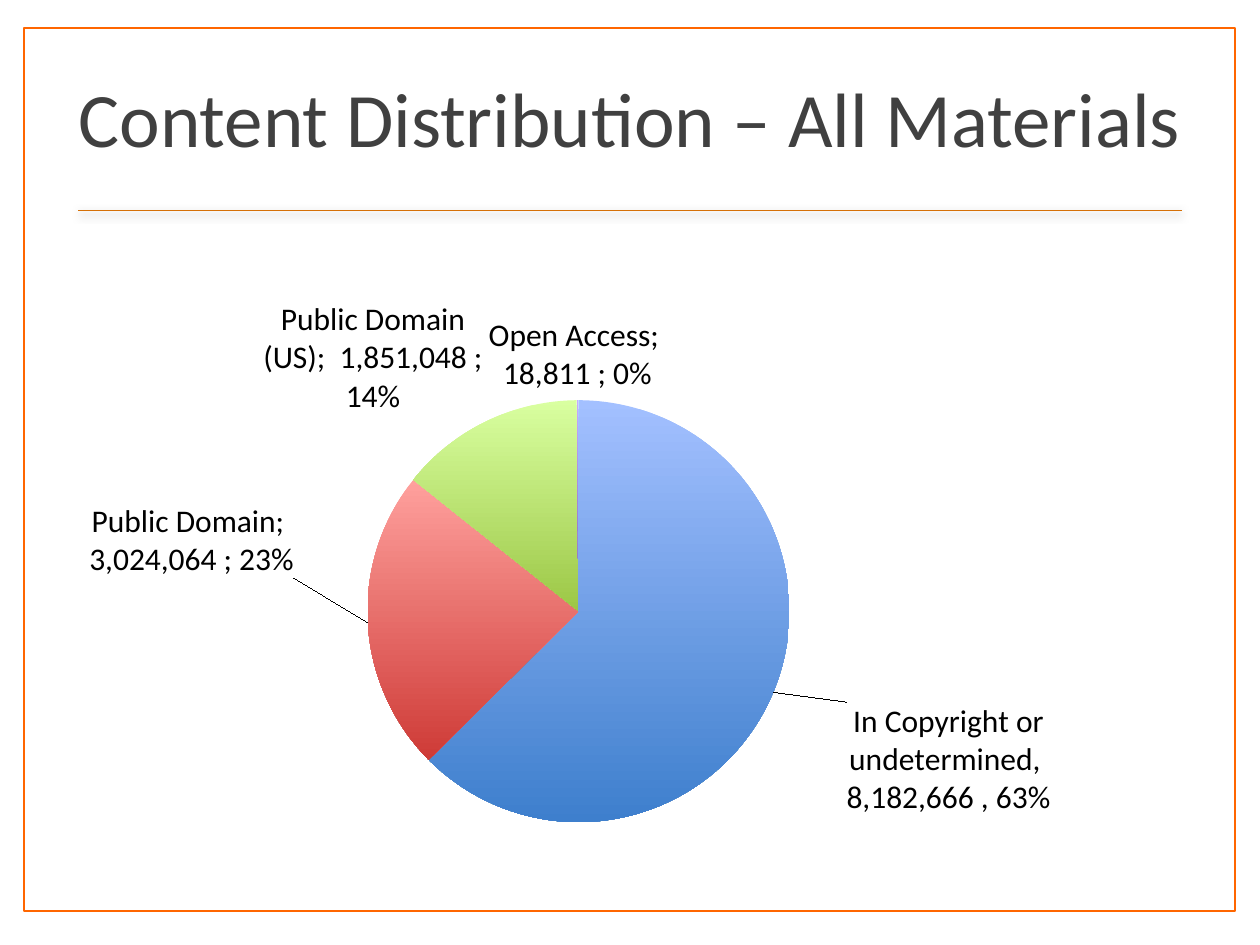
from lxml import etree
from pptx import Presentation
from pptx.chart.data import CategoryChartData
from pptx.dml.color import RGBColor
from pptx.enum.chart import XL_CHART_TYPE, XL_LABEL_POSITION
from pptx.enum.shapes import MSO_CONNECTOR, MSO_SHAPE
from pptx.enum.text import MSO_ANCHOR, PP_ALIGN
from pptx.oxml import parse_xml
from pptx.oxml.ns import nsdecls, qn
from pptx.util import Inches, Pt

PIE = XL_CHART_TYPE.PIE
OUTSIDE = XL_LABEL_POSITION.OUTSIDE_END
STRAIGHT = MSO_CONNECTOR.STRAIGHT
RECTANGLE = MSO_SHAPE.RECTANGLE
MIDDLE = MSO_ANCHOR.MIDDLE
CENTER = PP_ALIGN.CENTER

NUMBER_FORMAT = '_(* #,##0_);_(* \\(#,##0\\);_(* "-"??_);_('
MATERIALS = [
    ("In Copyright", 8182666, "A3C0FF", "3E7FCD"),
    ("Public Domain", 3024064, "FFA09D", "CE3B37"),
    ("Public Domain (US)", 1851048, "D9FFA0", "9CC746"),
    ("Open Access", 18811, "C7A9FF", "7D5BB0"),
]
COPYRIGHT_LABEL = "In Copyright or undetermined,  8,182,666 , 63%"
LABEL_OFFSETS = {0: (0.06, 0.01), 1: (-0.06, -0.12)}


def color(value):
    return RGBColor.from_string(value)


def manual_layout(x, y, size=None):
    layout = parse_xml(f"<c:layout {nsdecls('c')}><c:manualLayout/></c:layout>")
    settings = [("x", x), ("y", y)]
    if size:
        settings = [
            ("layoutTarget", "inner"), ("xMode", "edge"), ("yMode", "edge"),
            *settings, ("w", size[0]), ("h", size[1]),
        ]
    for name, value in settings:
        etree.SubElement(layout[0], qn(f"c:{name}")).set("val", str(value))
    return layout


class SlideBuilder:
    font_name = "Calibri"
    title_color = "404040"
    label_color = "000000"

    def __init__(self, slide):
        self.slide = slide

    def style(self, font, size, value):
        font.name = self.font_name
        font.size = Pt(size)
        font.color.rgb = color(value)

    def frame(self, left, top, width, height, line):
        shape = self.slide.shapes.add_shape(
            RECTANGLE, Inches(left), Inches(top), Inches(width), Inches(height))
        shape.shadow.inherit = False
        shape.fill.solid()
        shape.fill.fore_color.rgb = color("FFFFFF")
        shape.line.color.rgb = color(line)
        shape.line.width = Pt(1)

    def rule(self, left, right, y, line):
        connector = self.slide.shapes.add_connector(
            STRAIGHT, Inches(left), Inches(y), Inches(right), Inches(y))
        connector.line.color.rgb = color(line)
        connector.line.width = Pt(1)
        connector._element.spPr.append(parse_xml(
            f"<a:effectLst {nsdecls('a')}>"
            '<a:outerShdw blurRad="63500" dist="22860" dir="5400000">'
            '<a:srgbClr val="000000"><a:alpha val="35000"/></a:srgbClr>'
            "</a:outerShdw></a:effectLst>"))

    def title(self, text, left, top, width, height):
        shape = self.slide.shapes.add_textbox(
            Inches(left), Inches(top), Inches(width), Inches(height))
        text_frame = shape.text_frame
        text_frame.word_wrap = True
        text_frame.vertical_anchor = MIDDLE
        paragraph = text_frame.paragraphs[0]
        paragraph.text = text
        paragraph.alignment = CENTER
        self.style(paragraph.font, 44, self.title_color)

    def pie(self, materials, left, top, width, height):
        data = CategoryChartData(number_format=NUMBER_FORMAT)
        data.categories = [material[0] for material in materials]
        data.add_series("Series 1", [material[1] for material in materials])
        chart = self.slide.shapes.add_chart(
            PIE, Inches(left), Inches(top), Inches(width), Inches(height), data).chart
        chart.has_legend = False
        chart.has_title = False
        self.style(chart.font, 18, self.label_color)
        plot = chart.plots[0]
        plot.vary_by_categories = True
        plot_area = chart._chartSpace.chart.plotArea
        for layout in plot_area.findall(qn("c:layout")):
            plot_area.remove(layout)
        plot_area.insert(0, manual_layout(0.27, 0.3, (0.39, 0.61)))
        series = plot.series[0]
        for index, (_, _, light, dark) in enumerate(materials):
            fill = series.points[index].format.fill
            fill.gradient()
            fill.gradient_angle = 270
            for stop, value in zip(fill.gradient_stops, (light, dark)):
                stop.color.rgb = color(value)
        self.pie_labels(series)

    def pie_labels(self, series):
        labels = series.data_labels
        labels.show_value = True
        labels.show_category_name = True
        labels.show_percentage = True
        labels.position = OUTSIDE
        self.style(labels.font, 18, self.label_color)
        for index, offset in LABEL_OFFSETS.items():
            label = series.points[index].data_label
            label.position = OUTSIDE
            if index == 0:
                paragraph = label.text_frame.paragraphs[0]
                paragraph.text = COPYRIGHT_LABEL
                self.style(paragraph.font, 18, self.label_color)
            else:
                self.style(label.font, 18, self.label_color)
            element = labels._element.findall(qn("c:dLbl"))[index]
            element.insert(1, manual_layout(*offset))
            for name in ("showCatName", "showPercent"):
                element.find(qn(f"c:{name}")).set("val", "1")
        for element in [labels._element, *labels._element.findall(qn("c:dLbl"))]:
            separator = etree.Element(qn("c:separator"))
            separator.text = "; "
            anchor = element.find(qn("c:showBubbleSize"))
            if anchor is None:
                anchor = element.find(qn("c:showPercent"))
            anchor.addnext(separator)
        leaders = labels._element.find(qn("c:showLeaderLines"))
        if leaders is None:
            leaders = etree.Element(qn("c:showLeaderLines"))
            labels._element.find(qn("c:separator")).addnext(leaders)
        leaders.set("val", "1")


def main():
    presentation = Presentation()
    presentation.slide_width = Inches(10)
    presentation.slide_height = Inches(7.5)
    builder = SlideBuilder(presentation.slides.add_slide(presentation.slide_layouts[6]))
    builder.frame(0.19, 0.22, 9.61, 7.01, "FF6600")
    builder.rule(0.62, 9.38, 1.67, "D57007")
    builder.title("Content Distribution – All Materials", 0.5, 0.3, 9, 1.25)
    builder.pie(MATERIALS, 0.5, 1.53, 8.8, 5.49)
    presentation.save("out.pptx")


if __name__ == "__main__":
    main()
